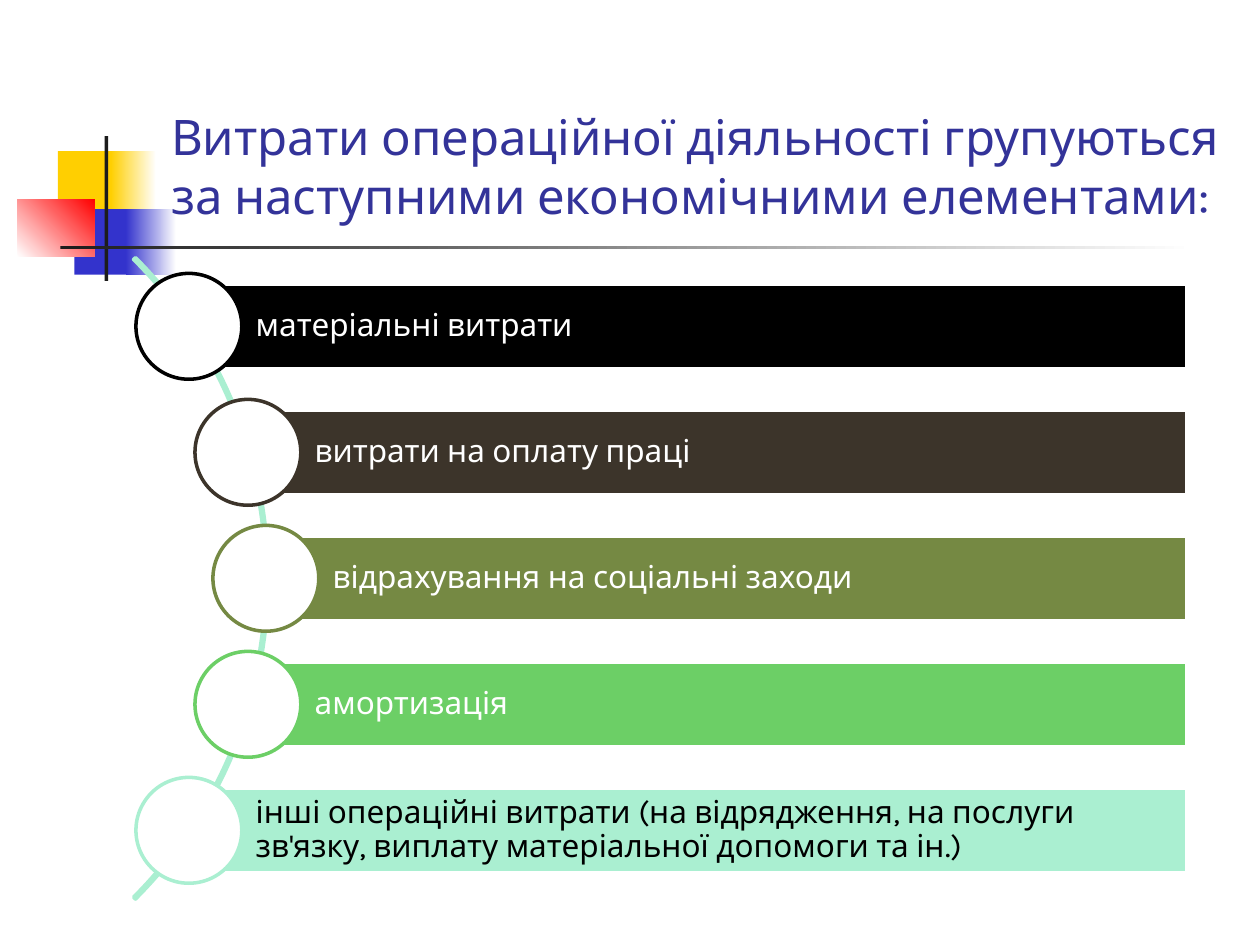
from dataclasses import dataclass
from math import sqrt

from pptx import Presentation
from pptx import util as u
from pptx.dml import color
from pptx.enum import shapes, text


@dataclass(frozen=True)
class Theme:
    font: str = "Karla"
    title_size: int = 28
    item_size: int = 18
    line_width: int = 2
    title: str = "333399"
    white: str = "FFFFFF"
    black: str = "000000"
    dark: str = "1C1C1C"
    yellow: str = "FFCF01"
    blue: str = "3333CC"
    red: str = "FF0000"
    brown: str = "3C342A"
    olive: str = "758943"
    green: str = "6CCF66"
    mint: str = "AAEFD1"


def rgb(value):
    return color.RGBColor.from_string(value)


def write_text(frame, content, *, font, size, colour, anchor, insets, spacing=1.0):
    frame.word_wrap = True
    frame.vertical_anchor = anchor
    frame.margin_left, frame.margin_top, frame.margin_right, frame.margin_bottom = map(u.Inches, insets)
    paragraph = frame.paragraphs[0]
    paragraph.alignment = text.PP_ALIGN.LEFT
    paragraph.line_spacing = spacing
    run = paragraph.add_run()
    run.text = content
    run.font.name = font
    run.font.size = u.Pt(size)
    run.font.color.rgb = rgb(colour)


class SlideBuilder:
    def __init__(self, slide, theme):
        self.slide = slide
        self.theme = theme

    def shape(self, kind, box, fill=None, line=None):
        shape = self.slide.shapes.add_shape(kind, *map(u.Inches, box))
        shape.shadow.inherit = False
        if fill:
            shape.fill.solid()
            shape.fill.fore_color.rgb = rgb(fill)
        else:
            shape.fill.background()
        if line:
            shape.line.color.rgb = rgb(line)
            shape.line.width = u.Pt(self.theme.line_width)
        else:
            shape.line.fill.background()
        return shape

    def rectangle(self, box, fill, line=None):
        return self.shape(shapes.MSO_SHAPE.RECTANGLE, box, fill, line)

    def gradient(self, box, start, end, angle=0):
        shape = self.rectangle(box, start)
        shape.fill.gradient()
        shape.fill.gradient_angle = angle
        for stop, value in zip(shape.fill.gradient_stops, (start, end)):
            stop.color.rgb = rgb(value)

    def title(self, box, content):
        frame = self.slide.shapes.add_textbox(*map(u.Inches, box)).text_frame
        write_text(frame, content, font=self.theme.font, size=self.theme.title_size,
                   colour=self.theme.title, anchor=text.MSO_ANCHOR.BOTTOM,
                   insets=(0.1, 0.05, 0.1, 0.05))

    def arc(self, center_x, center_y, radius):
        box = (center_x - radius, center_y - radius, 2 * radius, 2 * radius)
        arc = self.shape(shapes.MSO_SHAPE.BLOCK_ARC, box, line=self.theme.mint)
        for index, value in enumerate((189, 27, 0.003)):
            arc.adjustments[index] = value

    def item(self, center_x, center_y, content, fill, text_colour):
        right, height, diameter = 9.42, 0.67, 0.84
        bar = self.rectangle((center_x, center_y - height / 2, right - center_x, height),
                             fill, self.theme.white)
        write_text(bar.text_frame, content, font=self.theme.font, size=self.theme.item_size,
                   colour=text_colour, anchor=text.MSO_ANCHOR.MIDDLE,
                   insets=(0.53, 0.05, 0.05, 0.05), spacing=0.9)
        self.shape(shapes.MSO_SHAPE.OVAL,
                   (center_x - diameter / 2, center_y - diameter / 2, diameter, diameter),
                   self.theme.white, fill)


def main():
    theme = Theme()
    presentation = Presentation()
    presentation.slide_width, presentation.slide_height = u.Inches(10), u.Inches(7.5)
    builder = SlideBuilder(presentation.slides.add_slide(presentation.slide_layouts[6]), theme)

    builder.rectangle((0.46, 1.2, 0.48, 0.52), theme.yellow)
    builder.gradient((0.88, 1.2, 0.36, 0.52), theme.yellow, theme.white)
    builder.rectangle((0.59, 1.66, 0.46, 0.52), theme.blue)
    builder.gradient((1, 1.66, 0.4, 0.52), theme.blue, theme.white)
    builder.gradient((0.14, 1.58, 0.61, 0.46), theme.white, theme.red, angle=45)
    builder.rectangle((0.83, 1.08, 0.03, 1.15), theme.dark)
    builder.gradient((0.48, 1.95, 9, 0.03), theme.dark, theme.white)
    builder.title((1.26, 0.23, 8.52, 1.6),
                  "Витрати операційної діяльності групуються за наступними економічними елементами:")

    items = [
        ("матеріальні витрати", theme.black, theme.white),
        ("витрати на оплату праці", theme.brown, theme.white),
        ("відрахування на соціальні заходи", theme.olive, theme.white),
        ("амортизація", theme.green, theme.white),
        ("інші операційні витрати (на відрядження, на послуги зв'язку, "
         "виплату матеріальної допомоги та ін.)", theme.mint, theme.black),
    ]
    arc_x, arc_y, item_radius, pitch = -1.47, 4.59, 3.58, 1.0
    builder.arc(arc_x, arc_y, 3.6)
    for index, (content, fill, text_colour) in enumerate(items):
        offset = (index - len(items) // 2) * pitch
        center_x = arc_x + sqrt(item_radius ** 2 - offset ** 2)
        builder.item(center_x, arc_y + offset, content, fill, text_colour)

    presentation.save("out.pptx")


if __name__ == "__main__":
    main()
